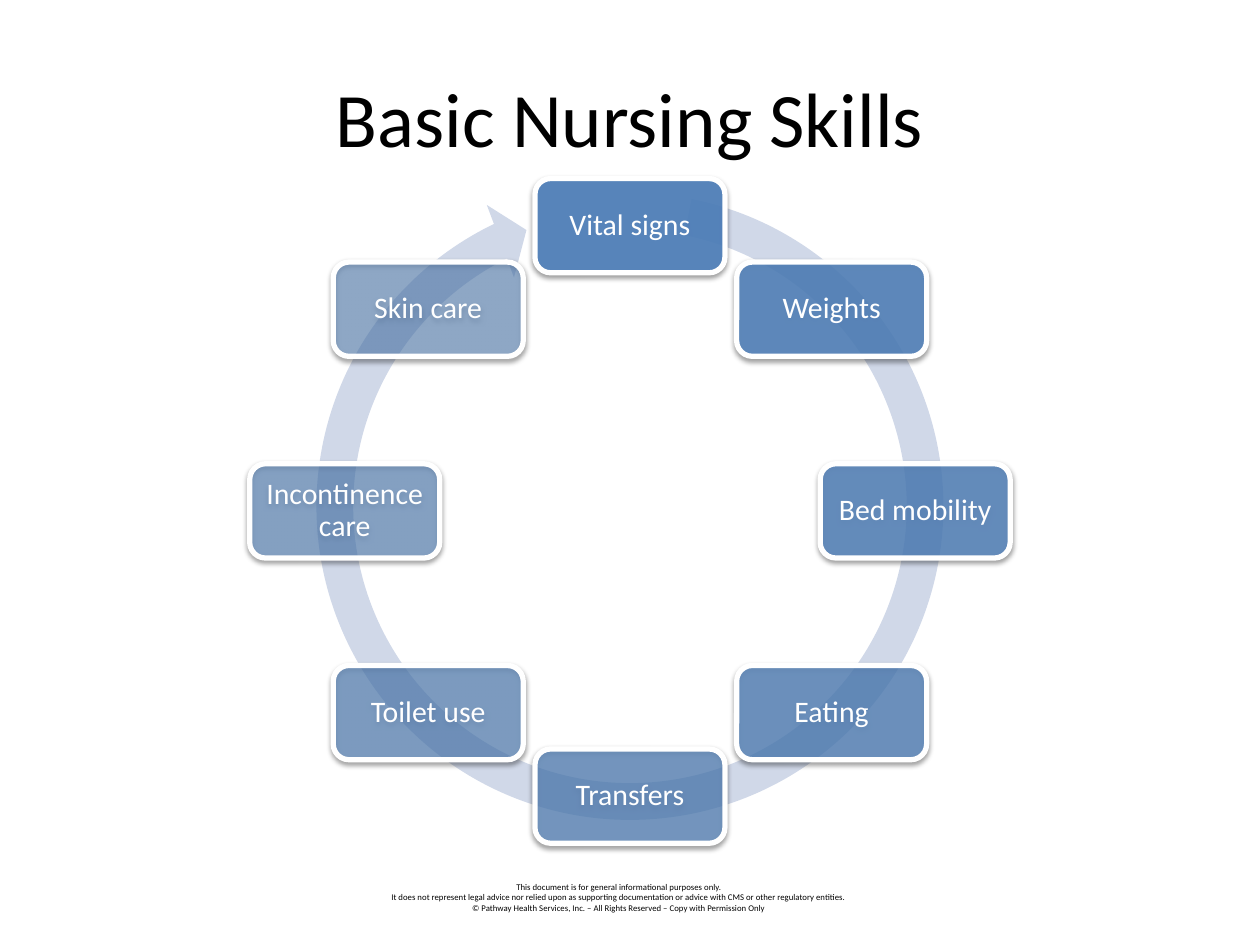
import math

import pptx
import pptx.dml.color
import pptx.enum.shapes
import pptx.enum.text
import pptx.oxml.ns
import pptx.util
from lxml import etree

Cm = pptx.util.Cm
Pt = pptx.util.Pt
RGBColor = pptx.dml.color.RGBColor
SHAPE = pptx.enum.shapes.MSO_SHAPE
ALIGN = pptx.enum.text.PP_ALIGN
ANCHOR = pptx.enum.text.MSO_ANCHOR
qn = pptx.oxml.ns.qn

BLACK = RGBColor(0x00, 0x00, 0x00)
WHITE = RGBColor(0xFF, 0xFF, 0xFF)
BLUE = RGBColor(0x4F, 0x81, 0xBD)
PALE = RGBColor(0xD0, 0xD8, 0xE8)

# Skill ring, in centimetres
MID_X, MID_Y, RADIUS = 12.7, 10.3, 5.75
CARD_W, CARD_H = 3.83, 1.9
SKILLS = ["Vital signs", "Weights", "Bed mobility", "Eating", "Transfers",
          "Toilet use", "Incontinence care", "Skin care"]
FOOTER = [
    "This document is for general informational purposes only.",
    "It does not represent legal advice nor relied upon as supporting "
    "documentation or advice with CMS or other regulatory entities.",
    "© Pathway Health Services, Inc. – All Rights Reserved – "
    "Copy with Permission Only",
]


class Deck:
    font = "Calibri"

    def __init__(self):
        self.prs = pptx.Presentation()
        self.prs.slide_width = Cm(25.4)
        self.prs.slide_height = Cm(19.05)
        self.slide = self.prs.slides.add_slide(self.prs.slide_layouts[5])

    def label(self, frame, text, size, color):
        frame.text = text
        frame.word_wrap = True
        for para in frame.paragraphs:
            para.alignment = ALIGN.CENTER
            for run in para.runs:
                run.font.name = self.font
                run.font.size = Pt(size)
                run.font.color.rgb = color

    def title(self, text, x, y, w, h):
        box = self.slide.shapes.title
        box.left, box.top, box.width, box.height = Cm(x), Cm(y), Cm(w), Cm(h)
        self.label(box.text_frame, text, 44, BLACK)
        box.text_frame.vertical_anchor = ANCHOR.MIDDLE

    def note(self, lines, x, y, w, h):
        box = self.slide.shapes.add_textbox(Cm(x), Cm(y), Cm(w), Cm(h))
        self.label(box.text_frame, "\n".join(lines), 5, BLACK)

    def shape(self, kind, x, y, w, h, color):
        """Add a filled preset shape centred on x, y."""
        item = self.slide.shapes.add_shape(
            kind, Cm(x - w / 2), Cm(y - h / 2), Cm(w), Cm(h))
        item.shadow.inherit = False
        item.fill.solid()
        item.fill.fore_color.rgb = color
        return item

    def arrow(self, x, y, size):
        ring = self.shape(SHAPE.CIRCULAR_ARROW, x, y, size, size, PALE)
        ring.line.fill.background()
        # Thickness, head angle, end angle, start angle, head width
        for i, value in enumerate([0.055, 3.31, 146.38, 168.81, 0.058]):
            ring.adjustments[i] = value

    def card(self, text, x, y, alpha):
        card = self.shape(SHAPE.ROUNDED_RECTANGLE, x, y, CARD_W, CARD_H, BLUE)
        card.line.color.rgb = WHITE
        card.line.width = Pt(3)
        props = card._element.spPr
        tint = props.find(qn("a:solidFill")).find(qn("a:srgbClr"))
        etree.SubElement(tint, qn("a:alpha"), val=str(alpha * 1000))
        self.shade(props.find(qn("a:effectLst")))

        frame = card.text_frame
        self.label(frame, text, 17, WHITE)
        frame.vertical_anchor = ANCHOR.MIDDLE
        frame.margin_left = frame.margin_right = Cm(0.18)
        frame.margin_top = frame.margin_bottom = Cm(0.18)
        frame.paragraphs[0].line_spacing = 0.9

    def shade(self, effects):
        drop = etree.SubElement(
            effects, qn("a:outerShdw"), blurRad=str(int(Pt(3.1))),
            dist=str(int(Pt(1.6))), dir="5400000", rotWithShape="0")
        tint = etree.SubElement(drop, qn("a:srgbClr"), val=str(BLACK))
        etree.SubElement(tint, qn("a:alpha"), val="38000")


def main():
    deck = Deck()

    # Title and footer
    deck.title("Basic Nursing Skills", 1.27, 0.76, 22.86, 3.18)
    deck.note(FOOTER, 6.98, 17.65, 11, 0.89)

    # Cycle arrow behind the cards
    deck.arrow(MID_X, 10.21, 13.46)

    # Cards run clockwise from the top, fading from 90 % to 50 %
    last = len(SKILLS) - 1
    for i, skill in enumerate(SKILLS):
        turn = 2 * math.pi * i / len(SKILLS)
        deck.card(skill, MID_X + RADIUS * math.sin(turn),
                  MID_Y - RADIUS * math.cos(turn), round(90 - 40 * i / last))

    deck.prs.save("out.pptx")


if __name__ == "__main__":
    main()
